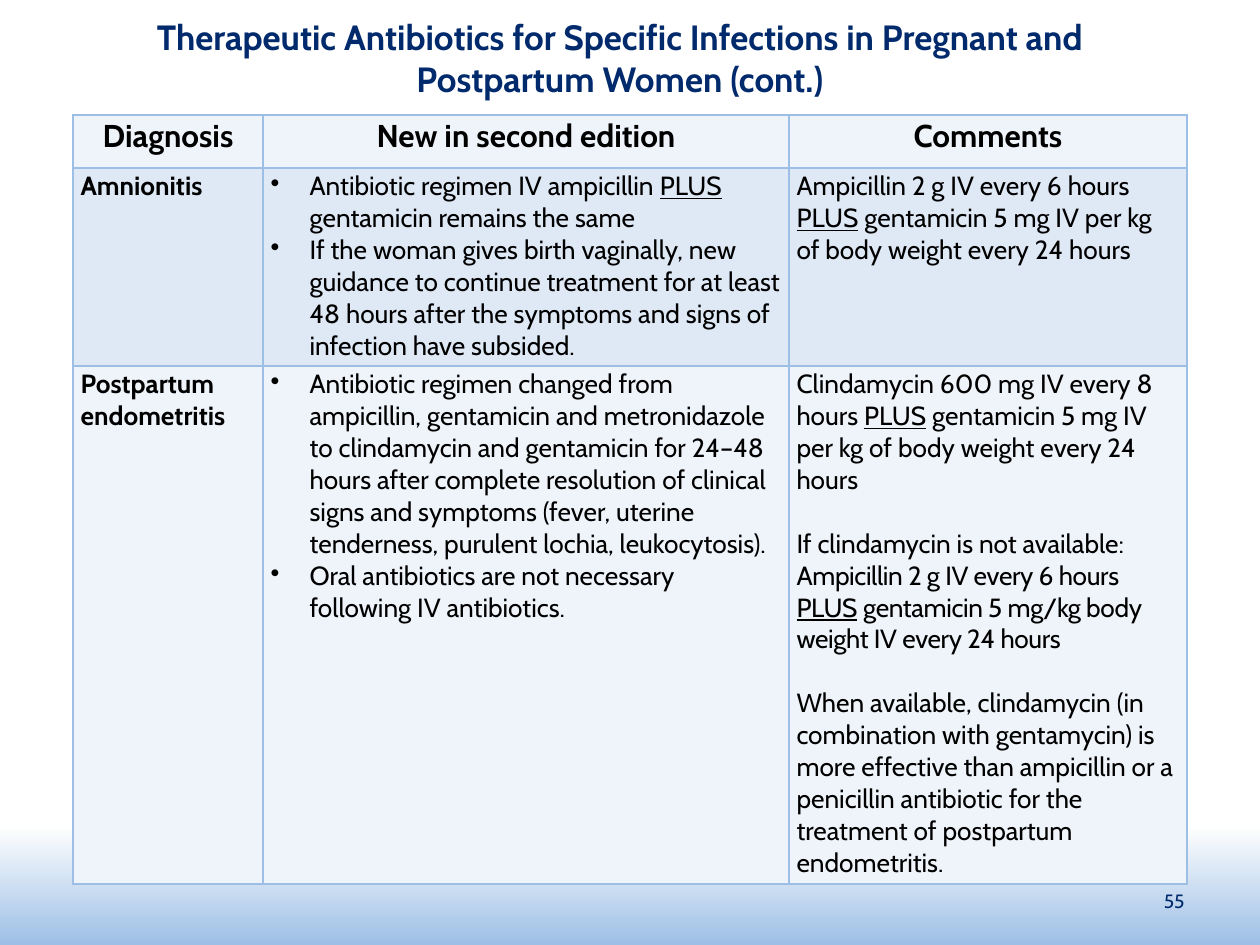
from pptx import Presentation
from pptx.dml.color import RGBColor
from pptx.enum.shapes import MSO_SHAPE as Shape
from pptx.enum.text import MSO_ANCHOR as Anchor, PP_ALIGN as Align
from pptx.oxml import parse_xml
from pptx.oxml.ns import nsdecls
from pptx.util import Emu, Inches, Pt

EMU_PER_PX = 914400 / 126
COLORS = {
    "navy": "002A6C",
    "black": "000000",
    "white": "FFFFFF",
    "blue": "9DBFE5",
    "pale": "EFF4FA",
    "tint": "DFE8F5",
}
TABLE_LEFT, TABLE_TOP = 73, 115
COLUMN_WIDTHS = [190, 526, 398]
ROW_HEIGHTS = [53, 198, 518]
ROW_FILLS = ["pale", "tint", "pale"]
HEADINGS = ["Diagnosis", "New in second edition", "Comments"]
TREATMENTS = [
    (
        "Amnionitis",
        [
            "Antibiotic regimen IV ampicillin PLUS gentamicin remains the same",
            "If the woman gives birth vaginally, new guidance to continue treatment "
            "for at least 48 hours after the symptoms and signs of infection have subsided.",
        ],
        ["Ampicillin 2 g IV every 6 hours PLUS gentamicin 5 mg IV per kg "
         "of body weight every 24 hours"],
    ),
    (
        "Postpartum endometritis",
        [
            "Antibiotic regimen changed from ampicillin, gentamicin and metronidazole "
            "to clindamycin and gentamicin for 24–48 hours after complete resolution of "
            "clinical signs and symptoms (fever, uterine tenderness, purulent lochia, "
            "leukocytosis).",
            "Oral antibiotics are not necessary following IV antibiotics.",
        ],
        [
            "Clindamycin 600 mg IV every 8 hours PLUS gentamicin 5 mg IV per kg "
            "of body weight every 24 hours",
            "If clindamycin is not available: \n"
            "Ampicillin 2 g IV every 6 hours PLUS gentamicin 5 mg/kg body weight "
            "IV every 24 hours",
            "When available, clindamycin (in combination with gentamycin) is more "
            "effective than ampicillin or a penicillin antibiotic for the treatment of "
            "postpartum endometritis.",
        ],
    ),
]


def px(value):
    return Emu(round(value * EMU_PER_PX))


def rgb(name):
    return RGBColor.from_string(COLORS[name])


class SlideBuilder:
    font = "Cabin"
    body_size = 15

    def __init__(self, slide):
        self.slide = slide

    def format_run(self, run, size, color, bold=False):
        run.font.name = self.font
        run.font.size = Pt(size)
        run.font.bold = bold
        run.font.color.rgb = rgb(color)

    def gradient_band(self, left, top, width, height):
        band = self.slide.shapes.add_shape(
            Shape.RECTANGLE, px(left), px(top), px(width), px(height))
        band.shadow.inherit = False
        band.line.fill.background()
        band.fill.gradient()
        band.fill.gradient_angle = 270
        stops = [(0.8, "white"), (1, "blue")]
        for stop, (position, color) in zip(band.fill.gradient_stops, stops):
            stop.position = position
            stop.color.rgb = rgb(color)

    def text_box(self, left, top, width, height, text, size, align, bold=False):
        box = self.slide.shapes.add_textbox(px(left), px(top), px(width), px(height))
        frame = box.text_frame
        frame.text = text
        frame.word_wrap = True
        frame.vertical_anchor = Anchor.MIDDLE
        frame.paragraphs[0].alignment = align
        self.format_run(frame.paragraphs[0].runs[0], size, "navy", bold)

    def table(self, left, top, widths, heights):
        table = self.slide.shapes.add_table(
            len(heights), len(widths), px(left), px(top),
            px(sum(widths)), px(sum(heights))).table
        table.first_row = table.horz_banding = False
        for column, width in zip(table.columns, widths):
            column.width = px(width)
        for row, height in zip(table.rows, heights):
            row.height = px(height)
        return table

    def cell(self, cell, paragraphs, fill, size=body_size, bold=False,
             align=Align.LEFT, bullets=False):
        cell.margin_left = cell.margin_right = Inches(0.06)
        cell.margin_top = cell.margin_bottom = Inches(0.02)
        self.borders(cell)
        cell.fill.solid()
        cell.fill.fore_color.rgb = rgb(fill)
        frame = cell.text_frame
        for index, text in enumerate(paragraphs):
            paragraph = frame.add_paragraph() if index else frame.paragraphs[0]
            paragraph.alignment = align
            if bullets:
                self.bullet(paragraph)
            elif index:
                paragraph.space_before = Pt(18.2)
            self.rich_text(paragraph, text, size, bold)

    def rich_text(self, paragraph, text, size, bold):
        """Underline PLUS and tighten the lines that follow a line break."""
        for index, line in enumerate(text.split("\n")):
            if index:
                paragraph.add_line_break()
            for part in filter(None, line.partition("PLUS")):
                run = paragraph.add_run()
                run.text = part
                self.format_run(run, size, "black", bold)
                run.font.underline = part == "PLUS"
                if index:
                    run.font._element.set("spc", "-20")

    def bullet(self, paragraph):
        properties = paragraph._p.get_or_add_pPr()
        indent = Inches(0.31)
        properties.set("marL", str(indent))
        properties.set("indent", str(-indent))
        properties.append(parse_xml(f'<a:buChar {nsdecls("a")} char="•"/>'))

    def borders(self, cell):
        properties = cell._tc.get_or_add_tcPr()
        for side in ("lnL", "lnR", "lnT", "lnB"):
            properties.append(parse_xml(
                f'<a:{side} {nsdecls("a")} w="{Pt(1)}"><a:solidFill>'
                f'<a:srgbClr val="{COLORS["blue"]}"/></a:solidFill></a:{side}>'))


def main():
    presentation = Presentation()
    presentation.slide_width = px(1260)
    presentation.slide_height = px(945)
    slide = presentation.slides.add_slide(presentation.slide_layouts[6])
    builder = SlideBuilder(slide)

    builder.gradient_band(0, 347, 1260, 598)
    builder.text_box(
        53, 21, 1134, 73,
        "Therapeutic Antibiotics for Specific Infections in Pregnant and "
        "Postpartum Women (cont.)", 20, Align.CENTER, bold=True)

    table = builder.table(TABLE_LEFT, TABLE_TOP, COLUMN_WIDTHS, ROW_HEIGHTS)
    for column, heading in enumerate(HEADINGS):
        builder.cell(table.cell(0, column), [heading], ROW_FILLS[0],
                     size=18, bold=True, align=Align.CENTER)
    for row, (diagnosis, changes, comments) in enumerate(TREATMENTS, start=1):
        fill = ROW_FILLS[row]
        builder.cell(table.cell(row, 0), [diagnosis], fill, bold=True)
        builder.cell(table.cell(row, 1), changes, fill, bullets=True)
        builder.cell(table.cell(row, 2), comments, fill)

    builder.text_box(903, 876, 294, 50, "55", 11, Align.RIGHT)
    presentation.save("out.pptx")


if __name__ == "__main__":
    main()
